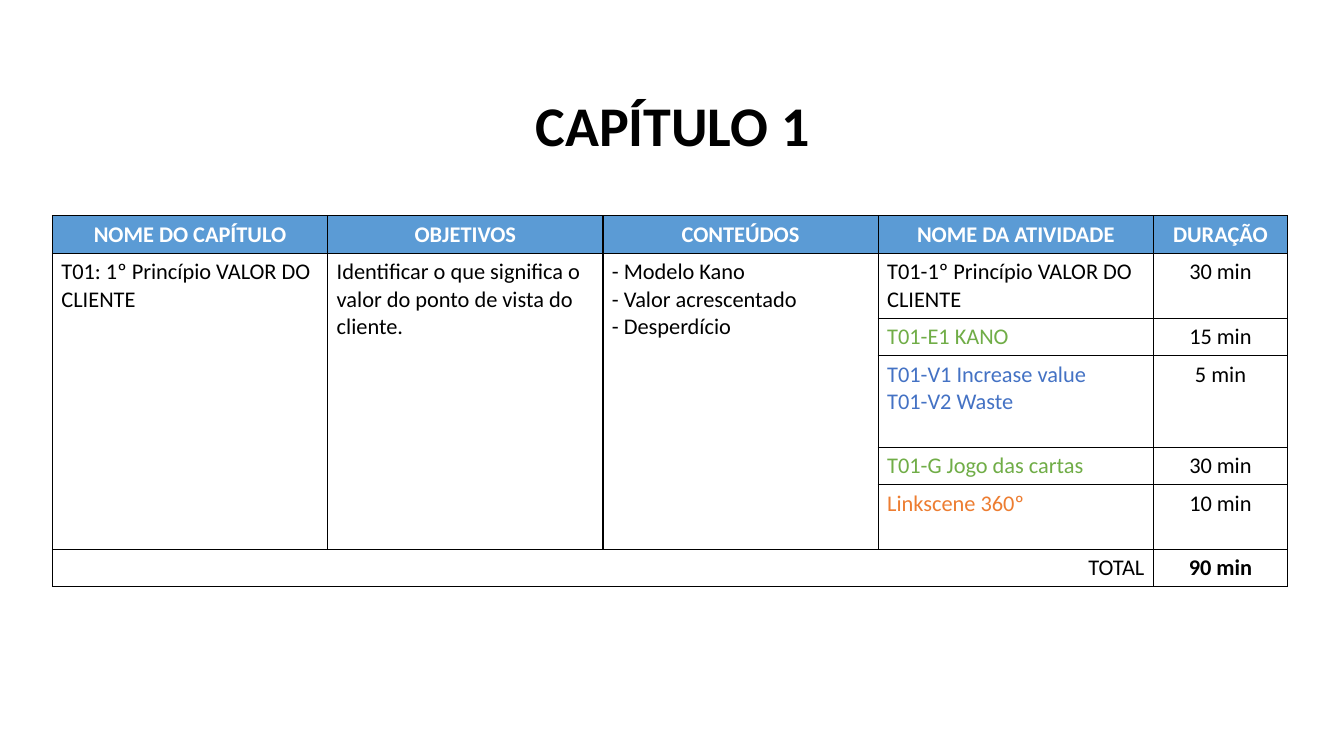
from dataclasses import dataclass

from lxml import etree
from pptx import Presentation, util as u
from pptx.dml.color import RGBColor
from pptx.enum import text
from pptx.oxml.ns import qn

LEFT, CENTER, RIGHT = text.PP_ALIGN.LEFT, text.PP_ALIGN.CENTER, text.PP_ALIGN.RIGHT


@dataclass(frozen=True)
class Theme:
    font: str = "Calibri"
    title_size: int = 40
    table_size: int = 16
    black: str = "000000"
    white: str = "FFFFFF"
    header: str = "5B9BD5"
    green: str = "70AD47"
    blue: str = "4472C4"
    orange: str = "ED7D31"


T = Theme()

TITLE = "CAPÍTULO 1"
HEADERS = ["NOME DO CAPÍTULO", "OBJETIVOS", "CONTEÚDOS", "NOME DA ATIVIDADE", "DURAÇÃO"]
CHAPTER = [
    ["T01: 1º Princípio VALOR DO CLIENTE"],
    ["Identificar o que significa o valor do ponto de vista do cliente."],
    ["- Modelo Kano", "- Valor acrescentado", "- Desperdício"],
]
ACTIVITIES = [  # lines, colour, duration, height in text lines
    (["T01-1º Princípio VALOR DO CLIENTE"], T.black, "30 min", 2),
    (["T01-E1 KANO"], T.green, "15 min", 1),
    (["T01-V1 Increase value", "T01-V2 Waste"], T.blue, "5 min", 3),
    (["T01-G Jogo das cartas"], T.green, "30 min", 1),
    (["Linkscene 360º"], T.orange, "10 min", 2),
]
TOTAL = ("TOTAL", "90 min")

SLIDE_W, SLIDE_H = 13.33, 7.5
COLUMNS = [2.73] * 4 + [1.33]
LINE_H, PAD_X, PAD_Y = 0.27, 0.09, 0.05
ROW_LINES = [1] + [activity[3] for activity in ACTIVITIES] + [1]
ROWS = [lines * LINE_H + 2 * PAD_Y for lines in ROW_LINES]
TABLE_LEFT, TABLE_TOP = 0.52, 2.14
TITLE_BOX = (2.51, 0.85, 8.32, 0.77)


def write(tf, lines, size, color=T.black, align=LEFT, bold=False):
    for i, line in enumerate(lines):
        p = tf.add_paragraph() if i else tf.paragraphs[0]
        p.alignment = align
        r = p.add_run()
        r.text = line
        r.font.name, r.font.size, r.font.bold = T.font, u.Pt(size), bold
        r.font.color.rgb = RGBColor.from_string(color)


def style_cell(cell, fill):
    """Give a cell its margins, fill and four thin black borders."""
    cell.margin_left = cell.margin_right = u.Inches(PAD_X)
    cell.margin_top = cell.margin_bottom = u.Inches(PAD_Y)
    cell.fill.solid()
    cell.fill.fore_color.rgb = RGBColor.from_string(fill)
    props = cell._tc.get_or_add_tcPr()
    for i, side in enumerate(("lnL", "lnR", "lnT", "lnB")):
        line = etree.Element(qn(f"a:{side}"), w=str(u.Pt(1)))
        solid = etree.SubElement(line, qn("a:solidFill"))
        etree.SubElement(solid, qn("a:srgbClr"), val=T.black)
        props.insert(i, line)


def add_title(s):
    tf = s.shapes.add_textbox(*map(u.Inches, TITLE_BOX)).text_frame
    tf.word_wrap = True
    write(tf, [TITLE], T.title_size, align=CENTER, bold=True)


def add_plan(s):
    frame = s.shapes.add_table(
        len(ROWS), len(COLUMNS), *map(u.Inches, (TABLE_LEFT, TABLE_TOP, sum(COLUMNS), sum(ROWS))))
    table = frame.table
    for column, width in zip(table.columns, COLUMNS):
        column.width = u.Inches(width)
    for i, (row, height) in enumerate(zip(table.rows, ROWS)):
        row.height = u.Inches(height)
        for cell in row.cells:
            style_cell(cell, T.white if i else T.header)

    def put(row, col, lines, **look):
        write(table.cell(row, col).text_frame, lines, T.table_size, **look)

    last_row, last_col = len(ROWS) - 1, len(COLUMNS) - 1
    for col, header in enumerate(HEADERS):
        table.cell(0, col).vertical_anchor = text.MSO_ANCHOR.MIDDLE
        put(0, col, [header], color=T.white, align=CENTER, bold=True)
    for col, lines in enumerate(CHAPTER):
        table.cell(1, col).merge(table.cell(last_row - 1, col))
        put(1, col, lines)
    for row, (lines, color, duration, _) in enumerate(ACTIVITIES, 1):
        put(row, last_col - 1, lines, color=color)
        put(row, last_col, [duration], align=CENTER)
    table.cell(last_row, 0).merge(table.cell(last_row, last_col - 1))
    put(last_row, 0, [TOTAL[0]], align=RIGHT)
    put(last_row, last_col, [TOTAL[1]], align=CENTER, bold=True)


def main():
    prs = Presentation()
    prs.slide_width, prs.slide_height = u.Inches(SLIDE_W), u.Inches(SLIDE_H)
    s = prs.slides.add_slide(prs.slide_layouts[6])
    add_plan(s)
    add_title(s)
    prs.save("out.pptx")


if __name__ == "__main__":
    main()
